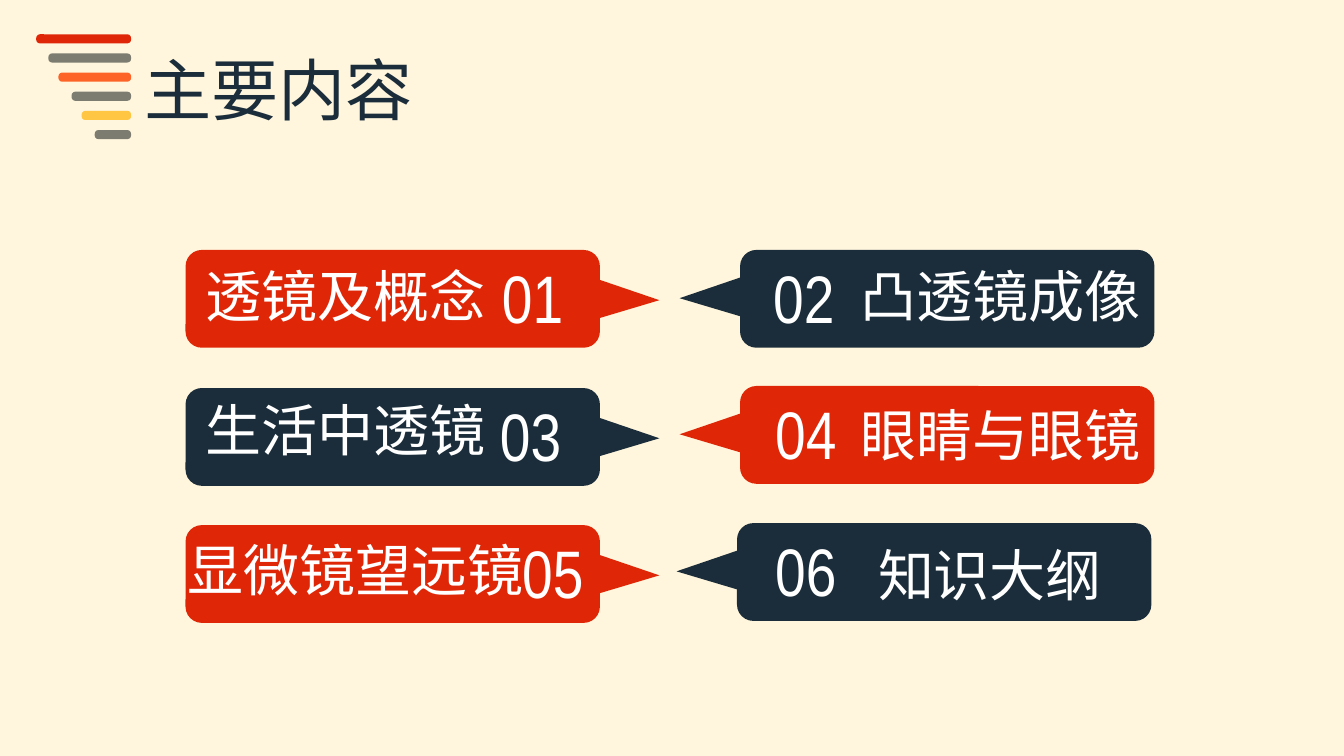
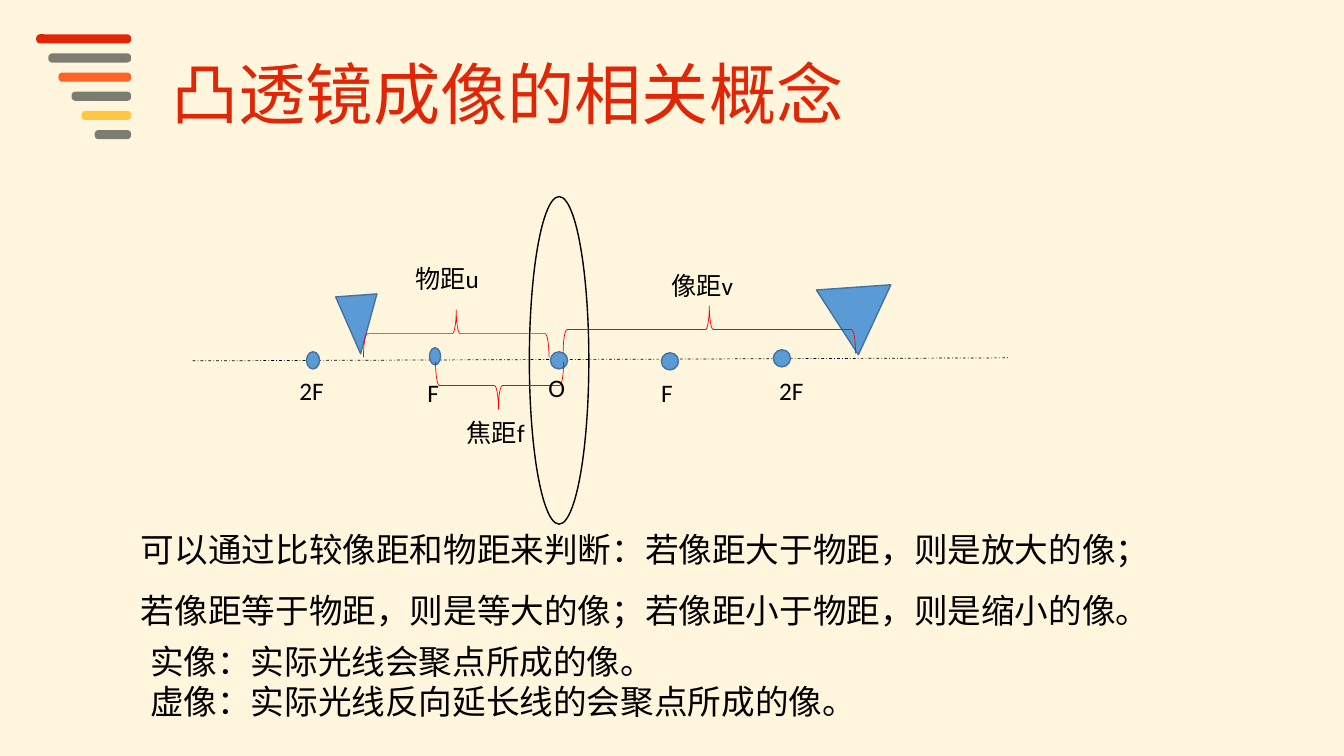
from dataclasses import dataclass

from lxml import etree
from pptx import Presentation
from pptx.dml.color import RGBColor
from pptx.enum.dml import MSO_LINE
from pptx.enum.shapes import MSO_CONNECTOR, MSO_SHAPE
from pptx.enum.text import MSO_ANCHOR, MSO_AUTO_SIZE, PP_ALIGN
from pptx.oxml.ns import qn
from pptx.util import Inches, Pt

ROUNDED = MSO_SHAPE.ROUNDED_RECTANGLE
TRIANGLE = MSO_SHAPE.ISOSCELES_TRIANGLE
OVAL = MSO_SHAPE.OVAL
BRACE = MSO_SHAPE.LEFT_BRACE
TITLE_ONLY = 5


@dataclass(frozen=True)
class Theme:
    cream: str = "FFF6DD"
    navy: str = "1B2D3A"
    red: str = "DF2708"
    orange: str = "FD6326"
    yellow: str = "FEC642"
    grey: str = "7C7C70"
    white: str = "FFFFFF"
    black: str = "000000"
    blue: str = "5B9BD5"
    blue_edge: str = "43739E"
    brace: str = "FF0000"
    cjk: str = "Noto Sans CJK SC"
    number_font: str = "Arial Narrow"
    body_font: str = "Calibri"
    title_size: int = 48
    heading_size: int = 40
    body_size: int = 24
    label_size: int = 18


THEME = Theme()

# Title bars: left edge, colour
BARS = [
    (0.36, THEME.red), (0.48, THEME.grey), (0.58, THEME.orange),
    (0.71, THEME.grey), (0.81, THEME.yellow), (0.94, THEME.grey),
]
BAR_RIGHT, BAR_TOP, BAR_PITCH, BAR_HEIGHT = 1.3, 0.34, 0.19, 0.09

CONTENTS_TITLE = "主要内容"
# Heading, colour, card left and top, number offset, heading offset x and y
CARDS = [
    ("透镜及概念", THEME.red, 1.84, 2.48, 3.04, 0.1, 0.07),
    ("凸透镜成像", THEME.navy, 7.34, 2.48, 0.23, 1.1, 0.07),
    ("生活中透镜", THEME.navy, 1.84, 3.85, 3.02, 0.1, 0.02),
    ("眼睛与眼镜", THEME.red, 7.34, 3.83, 0.25, 1.1, 0.09),
    ("显微镜望远镜", THEME.red, 1.84, 5.21, 3.24, -0.08, 0.05),
    ("知识大纲", THEME.navy, 7.31, 5.19, 0.28, 1.3, 0.12),
]
CARD_WIDTH, CARD_HEIGHT = 4.11, 0.97
POINTER_WIDTH, POINTER_HEIGHT = 0.39, 0.61
# Offset x and y from the card, rotation, tip position
POINTS_RIGHT = (4.2, 0.18, 90, 0.533)
POINTS_LEFT = (-0.49, 0.16, 270, 0.467)

CONCEPT_TITLE = "凸透镜成像的相关概念"
AXIS = (1.91, 3.58, 10, 3.55)
LENS = (5.25, 1.95, 0.59, 3.25)
POINTS = [
    (3.04, 3.49, 0.13, 0.17), (4.26, 3.45, 0.11, 0.17),
    (5.46, 3.49, 0.17, 0.17), (6.56, 3.5, 0.17, 0.17),
    (7.67, 3.47, 0.17, 0.17),
]
OBJECT_AND_IMAGE = [
    ((3.35, 2.93, 0.41, 0.58), 175.8),
    ((8.12, 2.85, 0.74, 0.67), 176),
]
# Box before rotation, rotation, position of the brace point
BRACES = [
    ((4.29, 2.39, 0.47, 1.84), 90, 0.5),
    ((6.8, 1.82, 0.47, 2.9), 90, 0.5),
    ((4.72, 3.19, 0.47, 1.27), 270, 0.491),
]
LABELS = [
    ("2F", 2.87, 3.67, 0.47), ("F", 4.14, 3.69, 0.36),
    ("O", 5.34, 3.64, 0.51), ("F", 6.46, 3.69, 0.36),
    ("2F", 7.63, 3.67, 0.47), ("物距u", 4.02, 2.56, 0.95),
    ("像距v", 6.56, 2.63, 1.02), ("焦距f", 4.53, 4.09, 0.93),
]
COMPARISON = ["可以通过比较像距和物距来判断：若像距大于物距，则是放大的像；"
              "若像距等于物距，则是等大的像；若像距小于物距，则是缩小的像。"]
DEFINITIONS = ["实像：实际光线会聚点所成的像。",
               "虚像：实际光线反向延长线的会聚点所成的像。"]


def inches(values):
    return [Inches(value) for value in values]


def rgb(color):
    return RGBColor.from_string(color)


def write(frame, lines, size, color, font=THEME.cjk, wrap=True, spacing=None):
    """Fill a text frame with one styled paragraph per line."""
    frame.auto_size = MSO_AUTO_SIZE.NONE
    frame.word_wrap = wrap
    frame.vertical_anchor = MSO_ANCHOR.TOP
    frame.text = "\n".join(lines)
    for para in frame.paragraphs:
        para.alignment = PP_ALIGN.LEFT
        if spacing:
            para.line_spacing = spacing
        para.font.size = Pt(size)
        para.font.color.rgb = rgb(color)
        para.font.name = font
        defaults = para._p.pPr.find(qn("a:defRPr"))
        etree.SubElement(defaults, qn("a:ea")).set("typeface", THEME.cjk)


def add_text(shapes, at, lines, size, color, **style):
    box = shapes.add_textbox(*inches(at))
    write(box.text_frame, lines, size, color, **style)


def add_figure(shapes, kind, at, fill=None, line=None, width=1, rotation=0):
    figure = shapes.add_shape(kind, *inches(at))
    figure.shadow.inherit = False
    figure.rotation = rotation
    if fill:
        figure.fill.solid()
        figure.fill.fore_color.rgb = rgb(fill)
    else:
        figure.fill.background()
    if line:
        figure.line.color.rgb = rgb(line)
        figure.line.width = Pt(width)
    else:
        figure.line.fill.background()
    return figure


def add_page(deck, title, at, color):
    """Add a slide with its title and the stack of title bars."""
    page = deck.slides.add_slide(deck.slide_layouts[TITLE_ONLY])
    holder = page.shapes.title
    holder.left, holder.top, holder.width, holder.height = inches(at)
    write(holder.text_frame, [title], THEME.title_size, color, wrap=False)
    bars = page.shapes.add_group_shape().shapes
    for index, (left, fill) in enumerate(BARS):
        at = (left, BAR_TOP + index * BAR_PITCH, BAR_RIGHT - left, BAR_HEIGHT)
        add_figure(bars, ROUNDED, at, fill).adjustments[0] = 0.4
    return page


def add_card(page, number, card):
    heading, color, left, top, number_dx, heading_dx, heading_dy = card
    shapes = page.shapes.add_group_shape().shapes
    add_figure(shapes, ROUNDED, (left, top, CARD_WIDTH, CARD_HEIGHT), color)
    dx, dy, rotation, tip = POINTS_RIGHT if number % 2 else POINTS_LEFT
    pointer = add_figure(
        shapes, TRIANGLE,
        (left + dx, top + dy, POINTER_WIDTH, POINTER_HEIGHT),
        color, rotation=rotation)
    pointer.adjustments[0] = tip
    add_text(shapes, (left + number_dx, top + 0.01, 1.11, 0.92),
             [f"{number:02}"], THEME.title_size, THEME.white,
             font=THEME.number_font)
    heading_width = 0.56 * len(heading) + 0.21
    add_text(shapes,
             (left + heading_dx, top + heading_dy, heading_width, 0.77),
             [heading], THEME.heading_size, THEME.white, wrap=False)


def build_contents(deck):
    page = add_page(deck, CONTENTS_TITLE, (1.33, 0.43, 2.89, 0.91), THEME.navy)
    for number, card in enumerate(CARDS, 1):
        add_card(page, number, card)


def build_concepts(deck):
    page = add_page(deck, CONCEPT_TITLE, (1.6, 0.47, 7.39, 0.91), THEME.red)
    shapes = page.shapes
    axis = shapes.add_connector(MSO_CONNECTOR.STRAIGHT, *inches(AXIS))
    axis.line.color.rgb = rgb(THEME.black)
    axis.line.width = Pt(0.5)
    axis.line.dash_style = MSO_LINE.DASH_DOT
    etree.SubElement(axis._element.spPr, qn("a:effectLst"))
    add_figure(shapes, OVAL, LENS, line=THEME.black)
    for at in POINTS:
        add_figure(shapes, OVAL, at, THEME.blue, THEME.blue_edge)
    for at, rotation in OBJECT_AND_IMAGE:
        add_figure(shapes, TRIANGLE, at, THEME.blue, THEME.blue_edge,
                   rotation=rotation)
    for at, rotation, middle in BRACES:
        brace = add_figure(shapes, BRACE, at, line=THEME.brace, width=0.5,
                           rotation=rotation)
        brace.adjustments[1] = middle
    for label, left, top, width in LABELS:
        add_text(shapes, (left, top, width, 0.4), [label],
                 THEME.label_size, THEME.black, font=THEME.body_font)
    add_text(shapes, (1.3, 5, 10.19, 1.31), COMPARISON, THEME.body_size,
             THEME.black, font=THEME.body_font, spacing=1.5)
    add_text(shapes, (1.39, 6.31, 8.4, 0.91), DEFINITIONS, THEME.body_size,
             THEME.black, font=THEME.body_font)


def main():
    deck = Presentation()
    deck.slide_width, deck.slide_height = inches((13.33, 7.5))
    background = deck.slide_master.background.fill
    background.solid()
    background.fore_color.rgb = rgb(THEME.cream)
    build_contents(deck)
    build_concepts(deck)
    deck.save("out.pptx")


if __name__ == "__main__":
    main()
